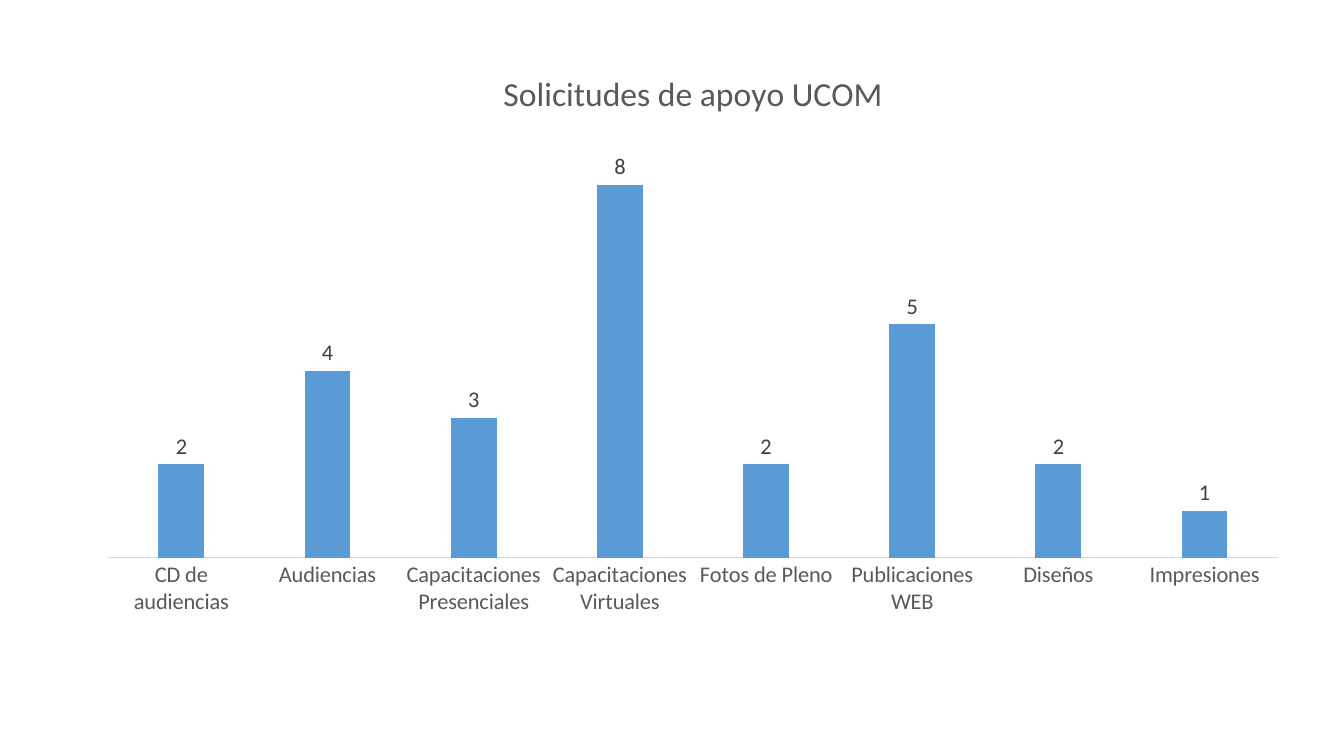
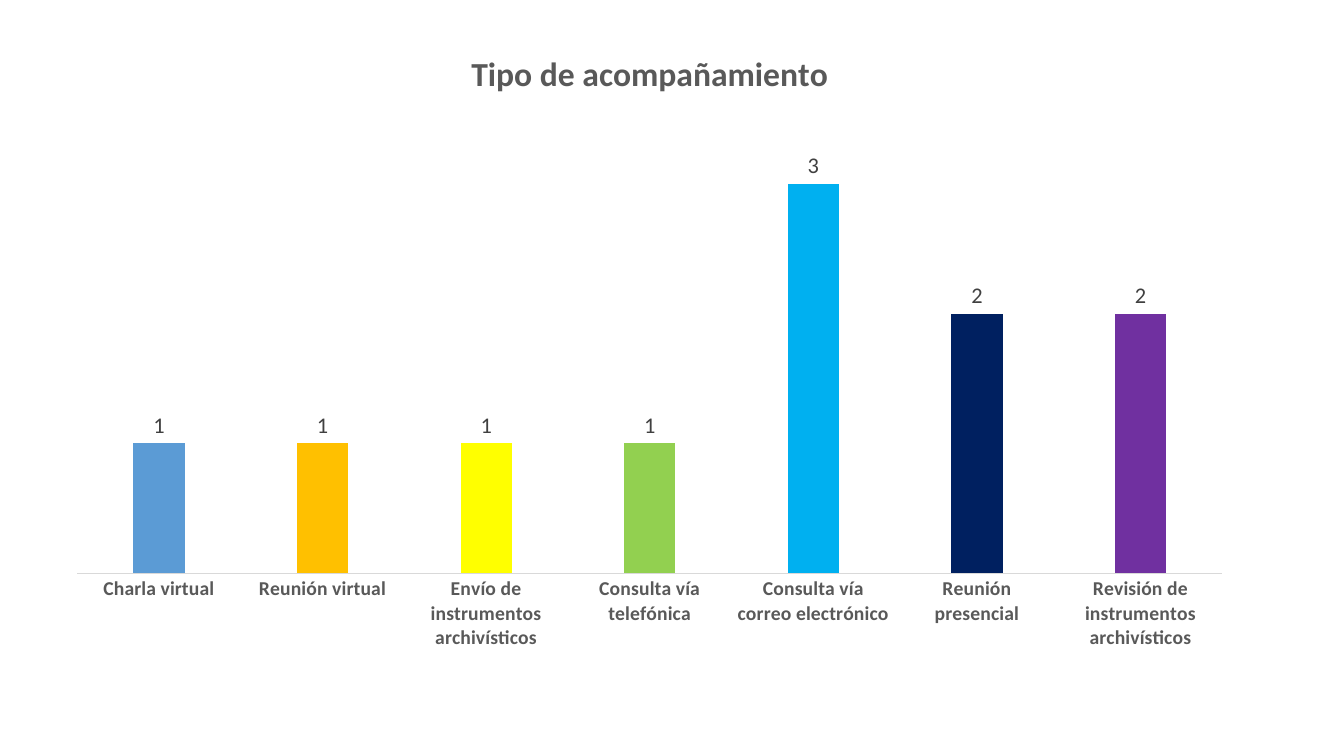
from pptx import Presentation
from pptx.chart.data import CategoryChartData
from pptx.dml.color import RGBColor
from pptx.enum.chart import XL_CHART_TYPE, XL_LABEL_POSITION, XL_TICK_MARK
from pptx.util import Inches, Pt

BLACK = RGBColor(0x00, 0x00, 0x00)
DARK = RGBColor(0x40, 0x40, 0x40)
GREY = RGBColor(0x59, 0x59, 0x59)
PALE = RGBColor(0xD9, 0xD9, 0xD9)
BLUE = RGBColor(0x5B, 0x9B, 0xD5)
GOLD = RGBColor(0xFF, 0xC0, 0x00)
YELLOW = RGBColor(0xFF, 0xFF, 0x00)
GREEN = RGBColor(0x92, 0xD0, 0x50)
SKY = RGBColor(0x00, 0xB0, 0xF0)
NAVY = RGBColor(0x00, 0x20, 0x60)
PURPLE = RGBColor(0x70, 0x30, 0xA0)

WIDTH, HEIGHT = Inches(13.33), Inches(7.5)
COLS, ROWS = 160, 90
BLANK = 6


class Deck:
    face = "Calibri"

    def __init__(self):
        self.prs = Presentation()
        self.prs.slide_width, self.prs.slide_height = WIDTH, HEIGHT
        self.slide = None

    def page(self):
        self.slide = self.prs.slides.add_slide(self.prs.slide_layouts[BLANK])

    def place(self, col, row, cols, rows):
        """Turn grid columns and rows into lengths."""
        return (int(col * WIDTH / COLS), int(row * HEIGHT / ROWS),
                int(cols * WIDTH / COLS), int(rows * HEIGHT / ROWS))

    def style(self, font, size, color, bold=False):
        look = {"name": self.face, "size": Pt(size), "bold": bold}
        for key, value in look.items():
            setattr(font, key, value)
        font.color.rgb = color

    def bars(self, title, counts, box, top, size, bold=False, fills=()):
        """Draw a column chart; fills colour single columns."""
        data = CategoryChartData()
        data.categories = list(counts)
        data.add_series("Series 1", list(counts.values()))
        chart = self.slide.shapes.add_chart(
            XL_CHART_TYPE.COLUMN_CLUSTERED, *self.place(*box), data).chart
        chart.has_legend = False
        self.style(chart.font, 10, BLACK)
        self.head(chart, title, bold)
        self.axes(chart, top, size, bold)
        self.columns(chart.plots[0], fills)

    def head(self, chart, title, bold):
        chart.has_title = True
        chart.chart_title.include_in_layout = False
        frame = chart.chart_title.text_frame
        frame.text = title
        self.style(frame.paragraphs[0].runs[0].font, 24, GREY, bold)

    def axes(self, chart, top, size, bold):
        names, scale = chart.category_axis, chart.value_axis
        names.major_tick_mark = names.minor_tick_mark = XL_TICK_MARK.NONE
        names.format.line.color.rgb = PALE
        names.format.line.width = Pt(0.75)
        self.style(names.tick_labels.font, size, GREY, bold)
        look = {"visible": False, "has_major_gridlines": False,
                "minimum_scale": 0, "maximum_scale": top}
        for key, value in look.items():
            setattr(scale, key, value)

    def columns(self, plot, fills):
        look = {"gap_width": 219, "overlap": -27,
                "vary_by_categories": False, "has_data_labels": True}
        for key, value in look.items():
            setattr(plot, key, value)
        labels = plot.data_labels
        labels.show_value = True
        labels.position = XL_LABEL_POSITION.OUTSIDE_END
        self.style(labels.font, 16, DARK)
        series = plot.series[0]
        self.paint(series, BLUE)
        for index, color in enumerate(fills):
            self.paint(series.points[index], color)

    def paint(self, part, color):
        part.format.fill.solid()
        part.format.fill.fore_color.rgb = color


def main():
    deck = Deck()

    deck.page()
    support = {
        "CD de audiencias": 2,
        "Audiencias": 4,
        "Capacitaciones Presenciales": 3,
        "Capacitaciones Virtuales": 8,
        "Fotos de Pleno": 2,
        "Publicaciones WEB": 5,
        "Diseños": 2,
        "Impresiones": 1,
    }
    deck.bars("Solicitudes de apoyo UCOM", support,
              (10, 5.75, 145, 69), top=9, size=16)

    deck.page()
    guidance = {
        "Charla virtual": 1,
        "Reunión virtual": 1,
        "Envío de instrumentos archivísticos": 1,
        "Consulta vía telefónica": 1,
        "Consulta vía correo electrónico": 3,
        "Reunión presencial": 2,
        "Revisión de instrumentos archivísticos": 2,
    }
    deck.bars("Tipo de acompañamiento", guidance,
              (6.35, 3.25, 142, 75.6), top=3.5, size=14, bold=True,
              fills=(BLUE, GOLD, YELLOW, GREEN, SKY, NAVY, PURPLE))

    deck.prs.save("out.pptx")


if __name__ == "__main__":
    main()
